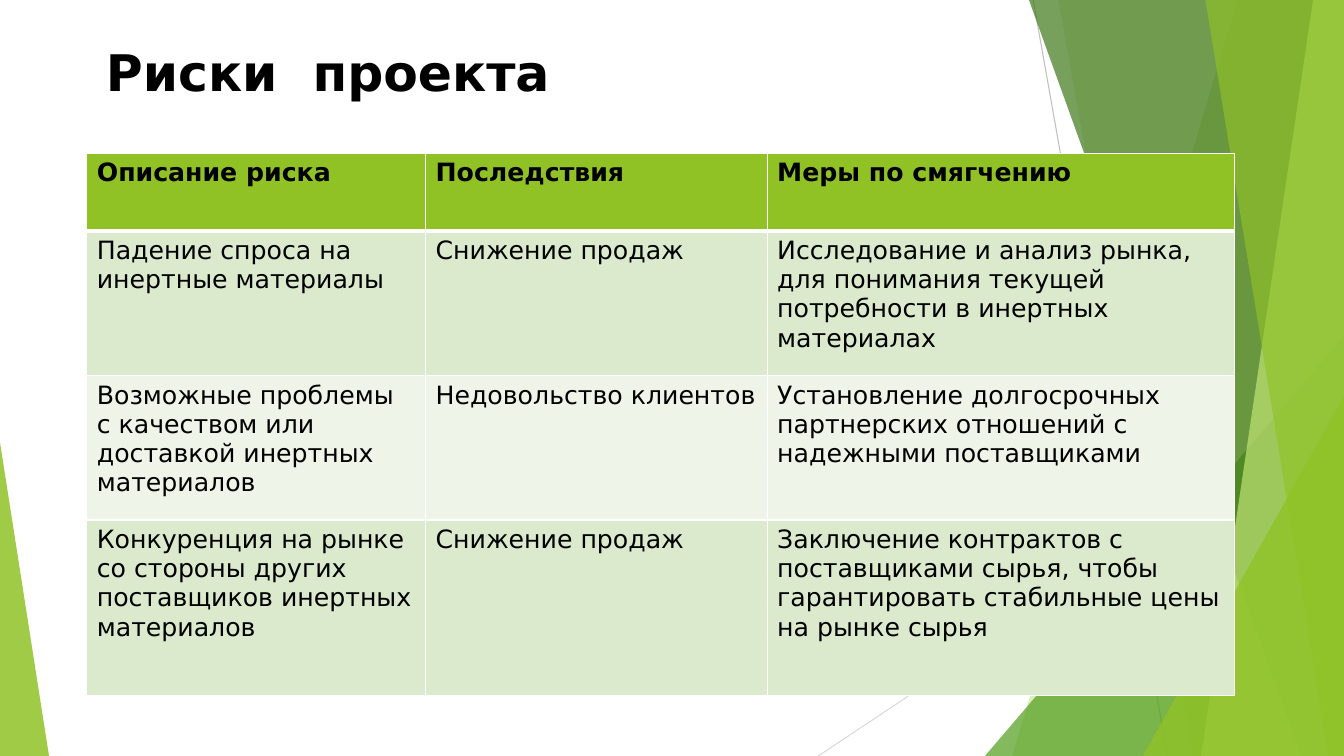
from lxml import etree
from pptx import Presentation
from pptx.dml.color import RGBColor
from pptx.enum import shapes, text
from pptx.oxml import ns
from pptx.util import Pt

LIME = RGBColor(0x90, 0xC2, 0x26)
GREEN = RGBColor(0x54, 0xA0, 0x21)
FOREST = RGBColor(0x3F, 0x78, 0x19)
PALE_LIME = RGBColor(0xC0, 0xE4, 0x74)
GREY = RGBColor(0xBF, 0xBF, 0xBF)
LIGHT_GREY = RGBColor(0xD9, 0xD9, 0xD9)
ROW_TINT = RGBColor(0xDB, 0xE9, 0xCD)
ROW_LIGHT = RGBColor(0xEE, 0xF4, 0xE8)
WHITE = RGBColor(0xFF, 0xFF, 0xFF)
BLACK = RGBColor(0, 0, 0)
FACE = "DejaVu Sans"
WIDTH, HEIGHT = 960, 540


def add_border(cell, edge, weight):
    border = etree.SubElement(cell._tc.get_or_add_tcPr(), ns.qn(f"a:ln{edge}"), w=str(Pt(weight)))
    paint = etree.SubElement(border, ns.qn("a:solidFill"))
    etree.SubElement(paint, ns.qn("a:srgbClr"), val=str(WHITE))


def format_font(font, size, bold):
    for name, value in {"name": FACE, "size": Pt(size), "bold": bold}.items():
        setattr(font, name, value)
    font.color.rgb = BLACK


prs = Presentation()
prs.slide_width, prs.slide_height = Pt(WIDTH), Pt(HEIGHT)
slide = prs.slides.add_slide(prs.slide_layouts[5])

for ends, color in [((738, 0, 834, HEIGHT), GREY), ((WIDTH, 290, 584.5, HEIGHT), LIGHT_GREY)]:
    ray = slide.shapes.add_connector(shapes.MSO_CONNECTOR.STRAIGHT, *map(Pt, ends))
    ray.line.color.rgb = color
    ray.line.width = Pt(0.75)
    etree.SubElement(ray._element.spPr, ns.qn("a:effectLst"))

facets = [
    ((884, 723), LIME, 30),
    ((756, 852), LIME, 20),
    ((703.5, 240, 256.5, 300, 1), GREEN, 72),
    ((735, 929.5), FOREST, 70),
    ((938, 858), PALE_LIME, 70),
    ((861, 949), LIME, 65),
    ((816.5, 283, 143.5, 257, 1), LIME, 80),
    ((0, 316, 35, 224, 0), LIME, 85),
]
for outline, color, opacity in facets:
    if len(outline) == 2:
        top_x, bottom_x = outline
        slab = slide.shapes.build_freeform(Pt(top_x), Pt(0))
        corners = [(WIDTH, 0), (WIDTH, HEIGHT), (bottom_x, HEIGHT)]
        slab.add_line_segments([(Pt(x), Pt(y)) for x, y in corners], close=True)
        facet = slab.convert_to_shape()
    else:
        *frame, apex = outline
        facet = slide.shapes.add_shape(shapes.MSO_SHAPE.ISOSCELES_TRIANGLE, *map(Pt, frame))
        facet.adjustments[0] = apex
    facet.shadow.inherit = False
    facet.line.fill.background()
    facet.fill.solid()
    facet.fill.fore_color.rgb = color
    tone = facet._element.spPr.find(".//" + ns.qn("a:srgbClr"))
    etree.SubElement(tone, ns.qn("a:alpha"), val=str(opacity * 1000))

heading = slide.shapes.title
slide.shapes._spTree.append(heading._element)
for name, value in {"left": 68.5, "top": 21.5, "width": 677, "height": 59}.items():
    setattr(heading, name, Pt(value))
heading.text_frame.text = "Риски  проекта"
heading.text_frame.vertical_anchor = text.MSO_ANCHOR.MIDDLE
heading_line = heading.text_frame.paragraphs[0]
heading_line.alignment = text.PP_ALIGN.LEFT
format_font(heading_line.runs[0].font, 36, True)

risks = [
    ("Описание риска", "Последствия", "Меры по смягчению"),
    ("Падение спроса на инертные материалы", "Снижение продаж",
     "Исследование и анализ рынка, для понимания текущей потребности в инертных материалах"),
    ("Возможные проблемы с качеством или доставкой инертных материалов", "Недовольство клиентов",
     "Установление долгосрочных партнерских отношений с надежными поставщиками"),
    ("Конкуренция на рынке со стороны других поставщиков инертных материалов", "Снижение продаж",
     "Заключение контрактов с поставщиками сырья, чтобы гарантировать стабильные цены на рынке сырья"),
]
column_widths = [242, 244, 334]
row_heights = [55.5, 103.5, 103, 125.5]
row_fills = [LIME, ROW_TINT, ROW_LIGHT, ROW_TINT]

risk_table = slide.shapes.add_table(
    len(risks), len(column_widths), Pt(62), Pt(109.5),
    Pt(sum(column_widths)), Pt(sum(row_heights))).table
for column, width in zip(risk_table.columns, column_widths):
    column.width = Pt(width)
for r, (row, height) in enumerate(zip(risk_table.rows, row_heights)):
    row.height = Pt(height)
    weights = {"L": 1, "R": 1, "T": 3 if r == 1 else 1, "B": 3 if r == 0 else 1}
    for cell, wording in zip(row.cells, risks[r]):
        cell.text = wording
        format_font(cell.text_frame.paragraphs[0].runs[0].font, 18, r == 0)
        for edge, weight in weights.items():
            add_border(cell, edge, weight)
        cell.fill.solid()
        cell.fill.fore_color.rgb = row_fills[r]

prs.save("out.pptx")
